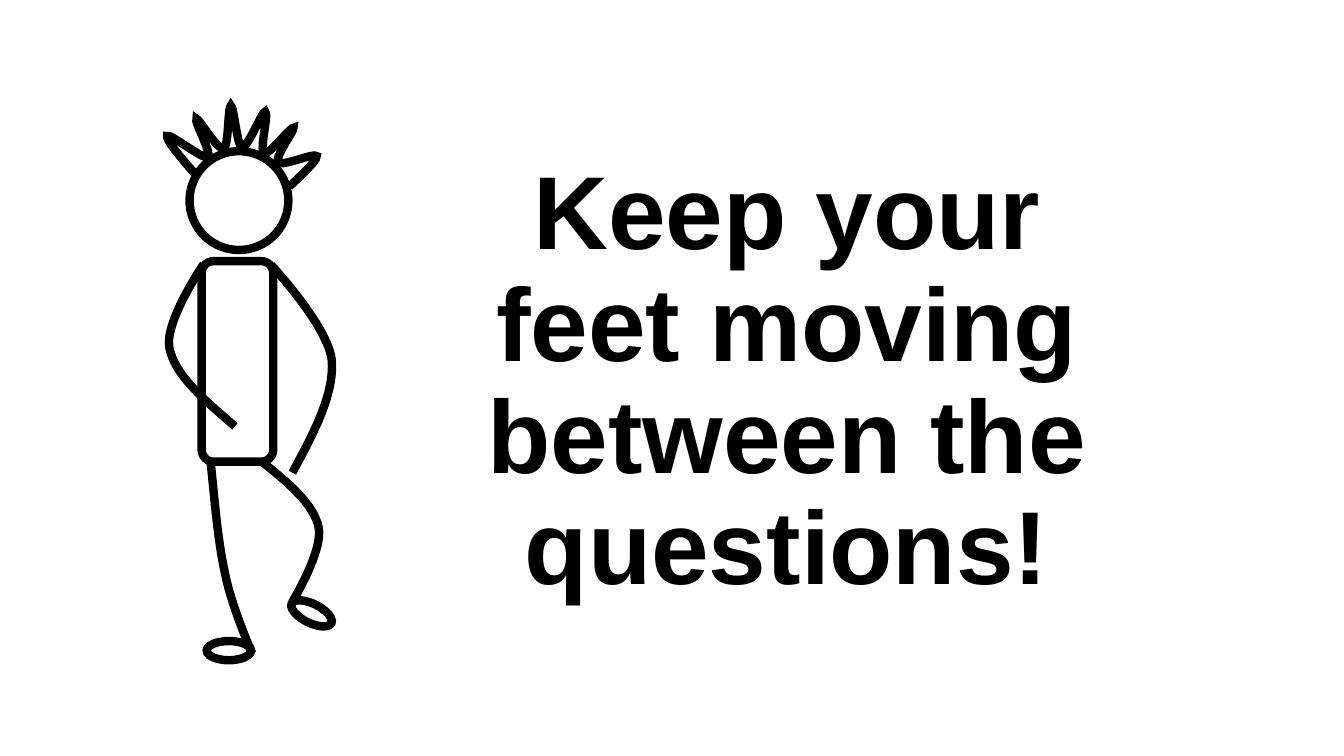
import pptx
import pptx.util
import pptx.dml.color
import pptx.enum.shapes
import pptx.enum.text
import pptx.oxml.ns
import lxml.etree
from dataclasses import dataclass

Inches = pptx.util.Inches
Shapes = pptx.enum.shapes.MSO_SHAPE
qn = pptx.oxml.ns.qn


@dataclass(frozen=True)
class Theme:
    ink: pptx.dml.color.RGBColor = pptx.dml.color.RGBColor(0, 0, 0)
    paper: pptx.dml.color.RGBColor = pptx.dml.color.RGBColor(255, 255, 255)
    font: str = "Arial"
    title_size: pptx.util.Length = pptx.util.Pt(74)
    stroke: pptx.util.Length = pptx.util.Pt(6)


def set_format(target, values):
    for name, value in values.items():
        setattr(target, name, value)


class SlideBuilder:
    def __init__(self, presentation, theme):
        self.theme = theme
        self.slide = presentation.slides.add_slide(presentation.slide_layouts[5])
        background = self.slide.background.fill
        background.solid()
        background.fore_color.rgb = theme.paper
        self.figure = self.slide.shapes.add_group_shape()

    def outline(self, shape):
        shape.shadow.inherit = False
        shape.fill.background()
        shape.line.color.rgb = self.theme.ink
        shape.line.width = self.theme.stroke
        line = shape.element.spPr.find(qn("a:ln"))
        lxml.etree.SubElement(line, qn("a:miter")).set("lim", "800000")

    def preset(self, kind, box, rotation=0):
        shape = self.figure.shapes.add_shape(kind, *map(Inches, box))
        shape.rotation = rotation
        self.outline(shape)

    def curve(self, points):
        points = [(Inches(x), Inches(y)) for x, y in points]
        builder = self.figure.shapes.build_freeform(*points[0])
        builder.add_line_segments(points[3::3], close=False)
        shape = builder.convert_to_shape()
        segments = list(shape.element.iter(qn("a:lnTo")))
        for index, segment in enumerate(segments):
            bezier = lxml.etree.Element(qn("a:cubicBezTo"))
            for x, y in points[3 * index + 1:3 * index + 4]:
                point = lxml.etree.SubElement(bezier, qn("a:pt"))
                point.set("x", str(x - shape.left))
                point.set("y", str(y - shape.top))
            segment.getparent().replace(segment, bezier)
        self.outline(shape)

    def title(self, text, box):
        shape = self.slide.shapes.title
        set_format(shape, dict(zip(("left", "top", "width", "height"),
                                   map(Inches, box))))
        frame = shape.text_frame
        frame.text = text
        set_format(frame, {
            "word_wrap": True,
            "auto_size": pptx.enum.text.MSO_AUTO_SIZE.NONE,
            "vertical_anchor": pptx.enum.text.MSO_ANCHOR.MIDDLE,
            "margin_left": Inches(0.13), "margin_right": Inches(0.13),
            "margin_top": Inches(0.07), "margin_bottom": Inches(0.07),
        })
        paragraph = frame.paragraphs[0]
        set_format(paragraph, {
            "alignment": pptx.enum.text.PP_ALIGN.CENTER, "line_spacing": 0.9})
        font = paragraph.runs[0].font
        set_format(font, {"name": self.theme.font, "bold": True,
                          "size": self.theme.title_size})
        font.color.rgb = self.theme.ink


STANDING_LEG = [(2.09, 4.59), (2.13, 4.98), (2.16, 5.36), (2.23, 5.68),
                (2.29, 6), (2.5, 6.48), (2.5, 6.48)]
HAIR = [
    (1.93, 1.72), (1.78, 1.55), (1.64, 1.38), (1.66, 1.35),
    (1.68, 1.32), (2.01, 1.58), (2.06, 1.56),
    (2.11, 1.53), (1.92, 1.2), (1.95, 1.18),
    (1.97, 1.17), (2.16, 1.5), (2.22, 1.47),
    (2.27, 1.45), (2.26, 1.05), (2.29, 1.05),
    (2.32, 1.05), (2.35, 1.45), (2.4, 1.46),
    (2.46, 1.47), (2.6, 1.1), (2.63, 1.11),
    (2.67, 1.12), (2.57, 1.49), (2.62, 1.52),
    (2.67, 1.54), (2.89, 1.25), (2.91, 1.27),
    (2.93, 1.28), (2.72, 1.56), (2.76, 1.61),
    (2.79, 1.66), (3.12, 1.51), (3.14, 1.55),
    (3.16, 1.59), (2.87, 1.85), (2.87, 1.85),
]
LEFT_ARM = [(2.33, 4.23), (2.03, 3.97), (1.73, 3.72), (1.68, 3.45),
            (1.63, 3.19), (2.02, 2.62), (2.02, 2.62)]
RIGHT_ARM = [(2.9, 4.69), (3.11, 4.3), (3.32, 3.91), (3.29, 3.57),
             (3.25, 3.23), (2.69, 2.63), (2.69, 2.63)]
RAISED_LEG = [(2.61, 4.59), (2.86, 4.79), (3.11, 5), (3.16, 5.23),
              (3.21, 5.46), (2.9, 5.97), (2.9, 5.97)]


def main():
    presentation = pptx.Presentation()
    set_format(presentation, {"slide_width": Inches(13.33),
                              "slide_height": Inches(7.5)})
    builder = SlideBuilder(presentation, Theme())
    builder.preset(Shapes.ROUNDED_RECTANGLE, (2, 2.59, 0.71, 1.99))
    builder.preset(Shapes.OVAL, (1.88, 1.5, 0.98, 0.98))
    builder.curve(STANDING_LEG)
    builder.curve(HAIR)
    for left, top, rotation in ((2.05, 6.36, 0), (2.87, 5.99, 26.5)):
        builder.preset(Shapes.OVAL, (left, top, 0.44, 0.19), rotation)
    for limb in (LEFT_ARM, RIGHT_ARM, RAISED_LEG):
        builder.curve(limb)
    builder.title("Keep your feet moving between the questions!",
                  (4.69, 0.32, 6.23, 6.97))
    presentation.save("out.pptx")


if __name__ == "__main__":
    main()
